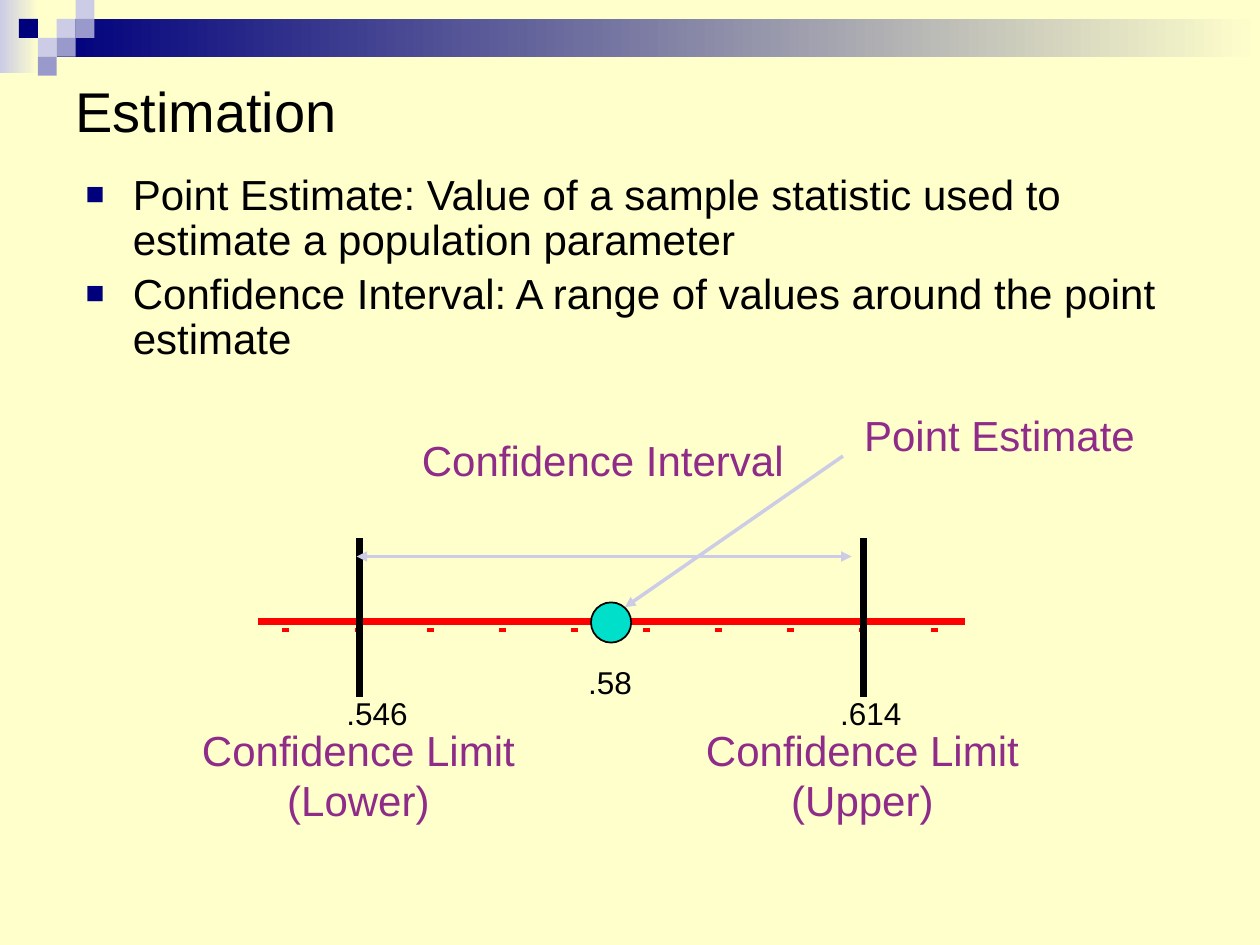
from typing import NamedTuple, Optional

import pptx
import pptx.dml.color
import pptx.enum.shapes
import pptx.enum.text
import pptx.oxml
import pptx.oxml.ns
import pptx.util

Pt = pptx.util.Pt
RGB = pptx.dml.color.RGBColor
SHAPE = pptx.enum.shapes.MSO_SHAPE
ALIGN = pptx.enum.text.PP_ALIGN
ANCHOR = pptx.enum.text.MSO_ANCHOR

CREAM = RGB(0xFF, 0xFF, 0xCC)
NAVY = RGB(0x00, 0x00, 0x7D)
LAVENDER = RGB(0xCC, 0xCC, 0xE6)
PERIWINKLE = RGB(0x99, 0x99, 0xCC)
BLACK = RGB(0, 0, 0)
RED = RGB(0xFF, 0, 0)
PURPLE = RGB(0x8F, 0x2B, 0x88)
TEAL = RGB(0x00, 0xDF, 0xCA)

GRID = 10.8
TICK_LEFT, TICK_STEP, TICK_COUNT = 163.4, 41.2, 10


class Block(NamedTuple):
    x: float
    y: float
    w: float
    h: float
    fill: RGB
    fade: Optional[RGB] = None


class Label(NamedTuple):
    x: float
    y: float
    w: float
    h: float
    paragraphs: tuple[str, ...]
    size: float
    color: RGB = BLACK
    align: ALIGN = ALIGN.LEFT
    anchor: ANCHOR = ANCHOR.TOP
    wrap: bool = True
    bullets: bool = False


class Line(NamedTuple):
    x1: float
    y1: float
    x2: float
    y2: float
    color: RGB
    width: float = 4
    ends: tuple[str, ...] = ()


BANDS = [
    Block(0, 0, 22.3, 41.8, LAVENDER, CREAM),
    Block(32.4, GRID, 687.6, 21.6, NAVY, CREAM),
]
# column and row on the corner grid
SQUARES = [
    (3, 1, LAVENDER), (4, 0, LAVENDER), (4, 1, PERIWINKLE), (2, 2, LAVENDER),
    (1, 1, NAVY), (3, 2, PERIWINKLE), (2, 3, PERIWINKLE),
]
TEXTS = [
    Label(36, 36, 648, 54, ("Estimation",), 32, anchor=ANCHOR.MIDDLE),
    Label(41.8, 95.8, 642.2, 120.2, (
        "Point Estimate: Value of a sample statistic used to estimate a population parameter",
        "Confidence Interval: A range of values around the point estimate",
    ), 24, bullets=True),
    Label(234, 244.8, 252, 36, ("Confidence Interval",), 24, PURPLE),
    Label(486.7, 230.4, 191.5, 36, ("Point Estimate",), 24, PURPLE),
    Label(98.6, 410.4, 212.4, 64.8, ("Confidence Limit (Lower)",), 24, PURPLE, ALIGN.CENTER),
    Label(386.6, 410.4, 212.4, 64.8, ("Confidence Limit (Upper)",), 24, PURPLE, ALIGN.CENTER),
    Label(329, 375.1, 39.6, 28.8, (".58",), 18, wrap=False),
    Label(190.8, 393.1, 49.7, 28.8, (".546",), 18, wrap=False),
    Label(473, 393.1, 49.7, 28.8, (".614",), 18, wrap=False),
]
AXIS = [
    Line(x, 358.6, x, 361.4, RED)
    for x in (TICK_LEFT + TICK_STEP * i for i in range(TICK_COUNT))
] + [Line(147.6, 355, 551.5, 355, RED)]
MARKS = [
    Line(205.2, 307.6, 205.2, 398.2, BLACK),
    Line(493.2, 307.6, 493.2, 398.2, BLACK),
    Line(481.7, 260.6, 357.1, 347, LAVENDER, 2, ("tailEnd",)),
    Line(203.8, 318, 486.7, 318, LAVENDER, 2, ("headEnd", "tailEnd")),
]


def add_xml(parent, tag: str, **attrs: str) -> None:
    child = pptx.oxml.parse_xml(f"<a:{tag} {pptx.oxml.ns.nsdecls('a')}/>")
    for name, value in attrs.items():
        child.set(name, value)
    parent.append(child)


def draw_block(s, block: Block, kind: SHAPE = SHAPE.RECTANGLE):
    sp = s.shapes.add_shape(kind, *map(Pt, block[:4]))
    sp.shadow.inherit = False
    sp.line.fill.background()
    if block.fade is None:
        sp.fill.solid()
        sp.fill.fore_color.rgb = block.fill
    else:
        sp.fill.gradient()
        sp.fill.gradient_angle = 0
        for stop, color in zip(sp.fill.gradient_stops, (block.fill, block.fade)):
            stop.color.rgb = color
    return sp


def draw_line(s, line: Line) -> None:
    sp = s.shapes.add_connector(
        pptx.enum.shapes.MSO_CONNECTOR.STRAIGHT, *map(Pt, line[:4]))
    sp.line.color.rgb = line.color
    sp.line.width = Pt(line.width)
    for end in line.ends:
        add_xml(sp.line._get_or_add_ln(), end, type="triangle")
    add_xml(sp._element.spPr, "effectLst")


def add_bullet(p) -> None:
    """Give the paragraph a square navy bullet with a hanging indent."""
    for name, value in {"line_spacing": 0.9, "space_before": Pt(4.8)}.items():
        setattr(p, name, value)
    pPr = p._p.get_or_add_pPr()
    pPr.set("marL", str(Pt(27)))
    pPr.set("indent", str(-Pt(27)))
    add_xml(pPr, "buClr")
    add_xml(pPr[-1], "srgbClr", val=str(NAVY))
    add_xml(pPr, "buSzPct", val="75000")
    add_xml(pPr, "buFont", typeface="Arial")
    add_xml(pPr, "buChar", char="■")


def draw_label(s, label: Label) -> None:
    tf = s.shapes.add_textbox(*map(Pt, label[:4])).text_frame
    for name, value in {"word_wrap": label.wrap, "vertical_anchor": label.anchor}.items():
        setattr(tf, name, value)
    for i, text in enumerate(label.paragraphs):
        p = tf.add_paragraph() if i else tf.paragraphs[0]
        p.alignment = label.align
        if label.bullets:
            add_bullet(p)
        r = p.add_run()
        r.text = text
        for name, value in {"name": "Arial", "size": Pt(label.size)}.items():
            setattr(r.font, name, value)
        r.font.color.rgb = label.color


def main() -> None:
    prs = pptx.Presentation()
    prs.slide_width, prs.slide_height = Pt(720), Pt(540)
    s = prs.slides.add_slide(prs.slide_layouts[6])
    s.background.fill.solid()
    s.background.fill.fore_color.rgb = CREAM

    for band in BANDS:
        draw_block(s, band)
    for column, row, color in SQUARES:
        draw_block(s, Block(column * GRID, row * GRID, GRID, GRID, color))
    for line in AXIS:
        draw_line(s, line)
    estimate = draw_block(s, Block(337.7, 344.2, 23, 23, TEAL), SHAPE.OVAL)
    estimate.line.color.rgb = BLACK
    estimate.line.width = Pt(1)
    for line in MARKS:
        draw_line(s, line)
    for label in TEXTS:
        draw_label(s, label)
    prs.save("out.pptx")


if __name__ == "__main__":
    main()
